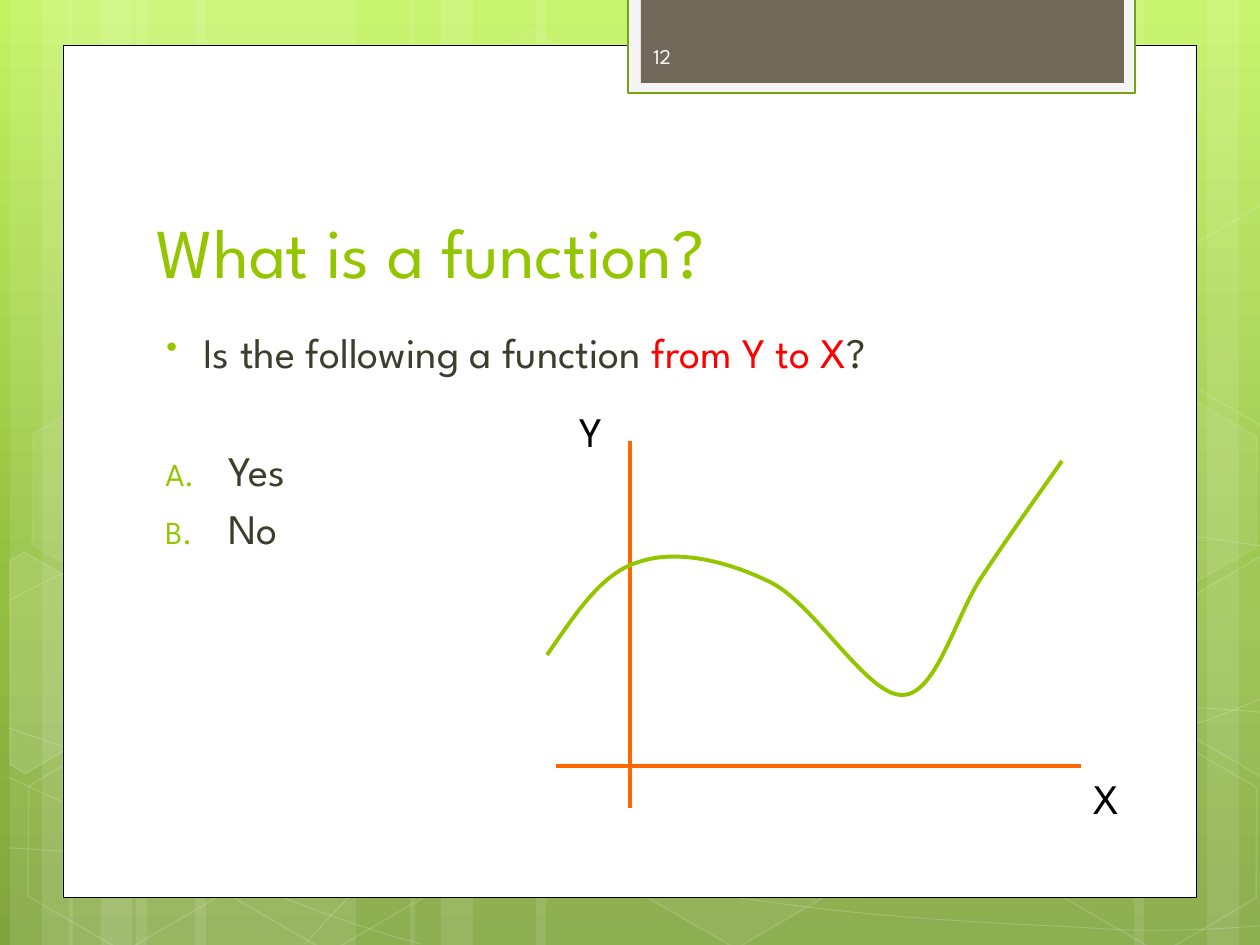
from copy import deepcopy

from lxml import etree
from pptx import Presentation
from pptx.dml.color import RGBColor
from pptx.enum.shapes import MSO_CONNECTOR, MSO_SHAPE
from pptx.enum.text import MSO_ANCHOR
from pptx.oxml.ns import qn
from pptx.util import Inches, Pt

PX = 7257  # EMU in one px, 126 px to the inch
RECTANGLE, HEXAGON = MSO_SHAPE.RECTANGLE, MSO_SHAPE.HEXAGON
STRAIGHT = MSO_CONNECTOR.STRAIGHT
TOP, MIDDLE, BOTTOM = MSO_ANCHOR.TOP, MSO_ANCHOR.MIDDLE, MSO_ANCHOR.BOTTOM

THEME = {
    "font": "League Spartan",
    "title": 40, "body": 24, "number": 12,
    "white": "FFFFFF", "black": "000000", "green": "94C600",
    "dark_green": "74A510", "orange": "FF6700", "red": "FF0000",
    "text": "3E3D2D", "frame": "F5F5F5", "tab": "71685A", "number_text": "FEFEFE",
    "background": [(0, "C3F35F"), (0.62, "93BF3F"), (1, "81A53E")],
}


def paint(shape, fill=None, fill_alpha=100, line=None, weight=1, line_alpha=100):
    """Set fill and line; None leaves a part empty, alpha is percent opacity."""
    shape.shadow.inherit = False
    for part, color, alpha, parent in (
        (shape.fill, fill, fill_alpha, ""),
        (shape.line.fill, line, line_alpha, qn("a:ln") + "/"),
    ):
        if color is None:
            part.background()
            continue
        part.solid()
        part.fore_color.rgb = RGBColor.from_string(THEME[color])
        if alpha < 100:
            node = shape.element.spPr.find(parent + qn("a:solidFill") + "/" + qn("a:srgbClr"))
            etree.SubElement(node, qn("a:alpha"), val=str(alpha * 1000))
    if line:
        shape.line.width = Pt(weight)


def draw_curve(points):
    """Draw joined cubic curves: a start, then two controls and an end for each."""
    builder = shapes.build_freeform(*points[0], scale=PX)
    builder.add_line_segments(points[1:], close=False)
    curve = builder.convert_to_shape()
    path = curve.element.spPr.find(".//" + qn("a:path"))
    segments = path.findall(qn("a:lnTo"))
    for first in range(0, len(segments), 3):
        cubic = etree.SubElement(path, qn("a:cubicBezTo"))
        for segment in segments[first:first + 3]:
            cubic.append(segment[0])
            path.remove(segment)
    return curve


presentation = Presentation()
presentation.slide_width, presentation.slide_height = Inches(10), Inches(7.5)
slide = presentation.slides.add_slide(presentation.slide_layouts[6])
shapes = slide.shapes

# Background gradient, light at the top
background = slide.background.fill
background.gradient()
background.gradient_angle = 270
stop_list = slide.element.find(".//" + qn("a:gsLst"))
stop_list.append(deepcopy(stop_list[-1]))
for stop, (position, color) in zip(background.gradient_stops, THEME["background"]):
    stop.position = position
    stop.color.rgb = RGBColor.from_string(color)

# Translucent vertical bands: left, width, rotation
for left, width, rotation in (
    (136, 220, 0), (10, 63, 0), (42, 105, 0), (195, 220, 0), (69, 63, 0), (101, 105, 0),
    (924, 220, 180), (1207, 63, 180), (1134, 105, 180),
    (536, 388, 0), (410, 63, 0), (441, 105, 0),
):
    band = shapes.add_shape(RECTANGLE, left * PX, 0, width * PX, 945 * PX)
    band.rotation = rotation
    paint(band, "white", 10)

# Faint background curves
for points in (
    [(9, 848), (77, 852), (145, 856), (239, 854), (334, 853), (451, 851), (577, 838),
     (703, 825), (882, 801), (998, 777), (1113, 753), (1231, 716), (1269, 694)],
    [(9, 601), (45, 581), (82, 562), (152, 543), (224, 524), (326, 496), (437, 488),
     (549, 479), (685, 478), (824, 488), (963, 498), (1193, 537), (1269, 547)],
    [(8, 777), (160, 847), (311, 916), (421, 944)],
    [(9, 728), (48, 742), (88, 756), (161, 776), (234, 795), (344, 827), (450, 848),
     (554, 869), (687, 892), (791, 905), (896, 919), (1008, 924), (1075, 927),
     (1140, 932), (1158, 930), (1191, 930), (1223, 929), (1246, 927), (1269, 925)],
    [(305, 944), (328, 919), (350, 893), (381, 871), (411, 848), (454, 823), (489, 805),
     (524, 788), (546, 780), (592, 767), (638, 755), (722, 737), (766, 728),
     (811, 719), (818, 719), (857, 717), (896, 713), (958, 709), (1000, 708),
     (1045, 707), (1116, 708), (1116, 708), (1145, 708), (1173, 708), (1201, 708),
     (1223, 709), (1245, 711), (1256, 712), (1268, 713), (1264, 712), (1268, 713)],
):
    paint(draw_curve(points), line="white", weight=0.5, line_alpha=20)

# Hexagons: left, top, fill, fill opacity, line opacity
for left, top, fill, fill_alpha, line_alpha in (
    (421, 45, "white", 4, 8), (626, 742, "white", 6, 12), (14, 745, None, 0, 12),
    (18, 393, "white", 7, 8), (219, 746, None, 0, 12), (949, 571, "white", 10, 12),
    (1051, 747, None, 0, 12), (1051, 396, "white", 7, 8),
):
    hexagon = shapes.add_shape(HEXAGON, left * PX, top * PX, 220 * PX, 192 * PX)
    hexagon.rotation = 30
    hexagon.adjustments[0] = 0.285
    paint(hexagon, fill, fill_alpha, "white", 1, line_alpha)

# Hexagons cut off by the slide edges, outlined before their rotation
LEFT_CUT = [(-42, 594), (-34, 579), (77, 578), (132, 675), (78, 770), (60, 770)]
RIGHT_CUT = [(1155, 654), (1209, 559), (1220, 559), (1326, 741), (1320, 750), (1210, 750)]
for outline, rise, fill, fill_alpha in (
    (LEFT_CUT, 0, "white", 10), (RIGHT_CUT, 0, "white", 4), (RIGHT_CUT, 351, None, 0),
):
    corners = [(x, y - rise) for x, y in outline]
    builder = shapes.build_freeform(*corners[0], scale=PX)
    builder.add_line_segments(corners[1:])
    cut_hexagon = builder.convert_to_shape()
    cut_hexagon.rotation = 30
    paint(cut_hexagon, fill, fill_alpha, "white", 1, 12)

# Page panel and number tab
for left, top, width, height, fill, line, weight in (
    (63, 45, 1134, 853, "white", "black", 0.5),
    (628, -3, 507, 96, "frame", "dark_green", 1.25),
    (641, -3, 483, 86, "tab", None, 0),
):
    panel = shapes.add_shape(RECTANGLE, left * PX, top * PX, width * PX, height * PX)
    paint(panel, fill, line=line, weight=weight)

# Text: box, anchor, size, paragraphs of (space before, indents, bullet, runs)
QUESTION = {"marL": 47, "indent": -37}
ANSWER = {"marL": 72, "indent": -63}
DOT = ("a:buChar", {"char": "•"})
LETTER = ("a:buAutoNum", {"type": "alphaUcPeriod"})
for box, anchor, size, paragraphs in (
    ((144, 141, 968, 158), BOTTOM, "title", [(0, {}, None, [("What is a function?", "green")])]),
    ((144, 320, 934, 509), TOP, "body", [
        (4.8, QUESTION, DOT, [("Is the following a function ", "text"),
                              ("from Y to X", "red"), ("?", "text")]),
        (38.6, ANSWER, LETTER, [("Yes", "text")]),
        (4.8, ANSWER, LETTER, [("No", "text")])]),
    ((641, 31, 184, 50), MIDDLE, "number", [(0, {}, None, [("12", "number_text")])]),
    ((1081, 766, 53, 63), TOP, "body", [(0, {}, None, [("X", "black")])]),
    ((567, 399, 53, 63), TOP, "body", [(0, {}, None, [("Y", "black")])]),
):
    frame = shapes.add_textbox(*(value * PX for value in box)).text_frame
    frame.word_wrap = True
    frame.vertical_anchor = anchor
    for index, (space, indents, bullet, runs) in enumerate(paragraphs):
        paragraph = frame.add_paragraph() if index else frame.paragraphs[0]
        paragraph.space_before = Pt(space)
        if bullet:
            properties = paragraph._p.get_or_add_pPr()
            for name, value in indents.items():
                properties.set(name, str(value * PX))
            bullet_color = etree.SubElement(properties, qn("a:buClr"))
            etree.SubElement(bullet_color, qn("a:srgbClr"), val=THEME["green"])
            etree.SubElement(properties, qn("a:buSzPct"), val="76000")
            etree.SubElement(properties, qn(bullet[0]), bullet[1])
        for text, color in runs:
            run = paragraph.add_run()
            run.text = text
            for name, value in {"name": THEME["font"], "size": Pt(THEME[size])}.items():
                setattr(run.font, name, value)
            run.font.color.rgb = RGBColor.from_string(THEME[color])

# Axes and function graph
for ends in ((556, 766, 1081, 766), (630, 808, 630, 441)):
    axis_line = shapes.add_connector(STRAIGHT, *(value * PX for value in ends))
    axis_line.line.color.rgb = RGBColor.from_string(THEME["orange"])
    axis_line.line.width = Pt(2.25)
    etree.SubElement(axis_line.element.spPr, qn("a:effectLst"))

graph = draw_curve([
    (547, 655), (575, 615), (601, 573), (639, 562), (677, 549), (728, 561), (772, 583),
    (816, 606), (868, 697), (903, 695), (937, 694), (956, 614), (983, 575),
    (1009, 536), (1036, 498), (1062, 461)])
paint(graph, line="green", weight=2.25)

presentation.save("out.pptx")
